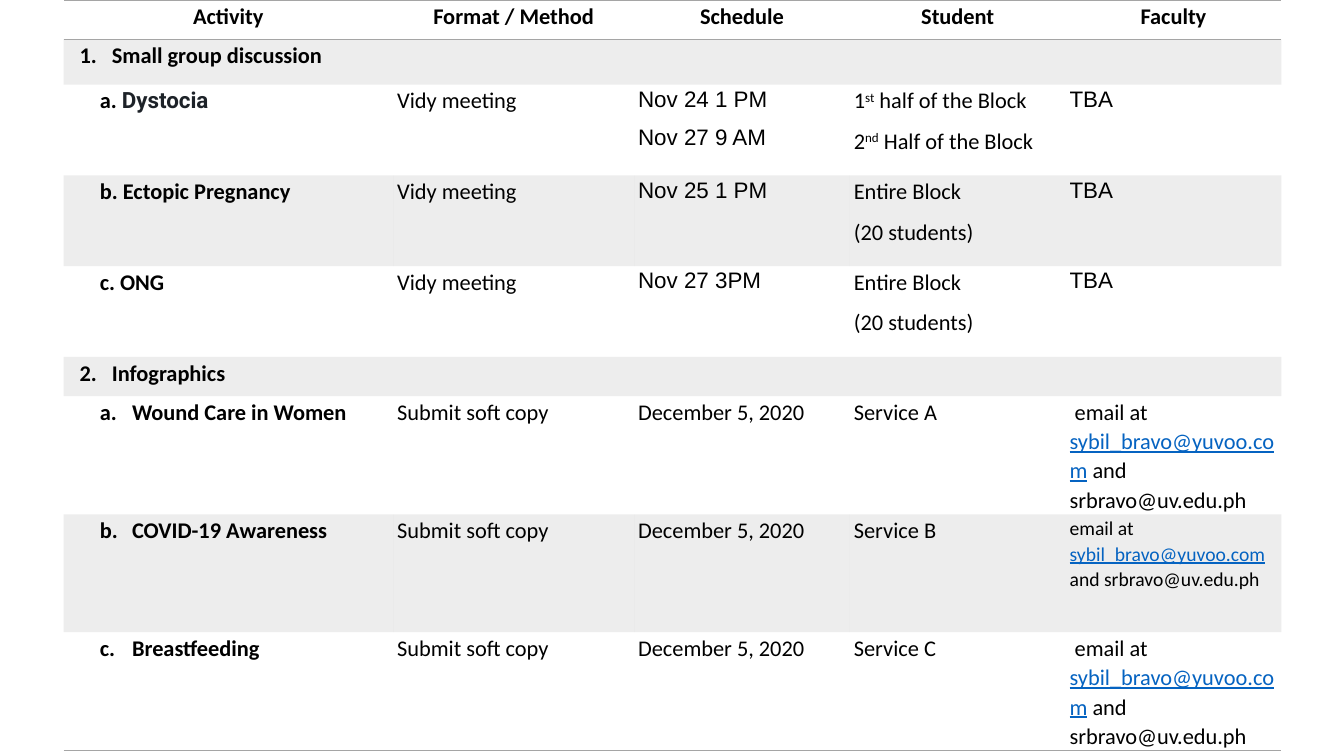
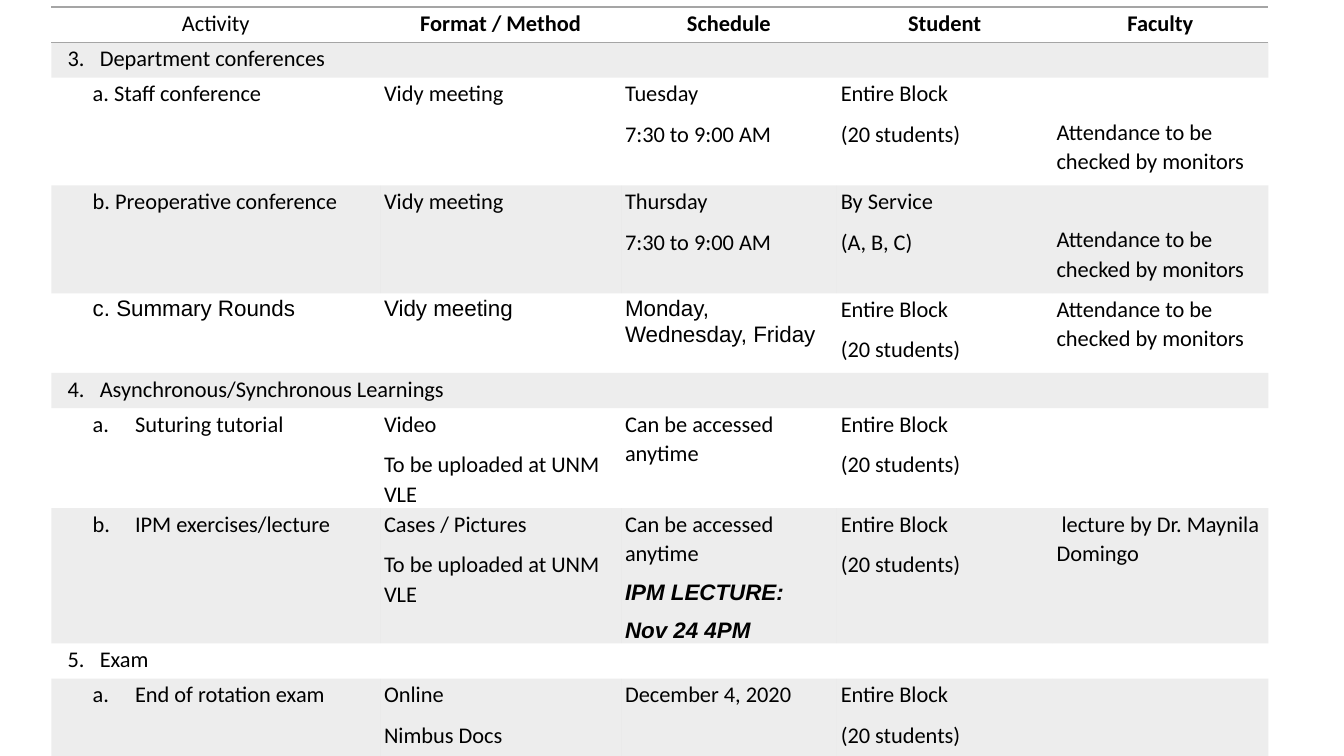
import pptx
import pptx.util
import pptx.dml.color
import pptx.enum.text
import pptx.oxml.ns
import lxml.etree

Inches = pptx.util.Inches
Pt = pptx.util.Pt
qn = pptx.oxml.ns.qn

# Shared look
GREY, BLACK, BLUE = "A5A5A5", "000000", "0563C1"
PLAIN_STYLE = "{2D5ABB26-0587-4C30-8999-92F81FD0307C}"
BASE = {"name": "Calibri", "size": Pt(16), "bold": False,
        "italic": False, "underline": False}
MARGINS = {"margin_left": Inches(0.04), "margin_right": Inches(0.04),
           "margin_top": Inches(0.01), "margin_bottom": 0}
PARA = {"line_spacing": 1.07, "space_after": Pt(8)}
COLS = [2.39, 2.14, 2.14, 2.14]
HEADS = ["Format / Method", "Schedule", "Student", "Faculty"]

# Run styles
BOLD = {"bold": True}
ARIAL = {"name": "Arial"}
STRONG = {"name": "Arial", "bold": True, "italic": True}
LINK = {"color": BLUE, "underline": True}
SUPER = {"base": "30000"}
ROBOTO = {"name": "Roboto", "bold": True, "color": "1D2228"}


def color(code):
    return pptx.dml.color.RGBColor.from_string(code)


def assign(item, values):
    for key, value in values.items():
        setattr(item, key, value)


# Kinds of cell content
def text(*runs, left=0, first=0, top=0.01, center=False):
    """Runs are strings or (string, style); a line break starts a paragraph."""
    return {"runs": runs, "left": left, "first": first,
            "top": top, "center": center}


def head(label, style=BOLD):
    return text((label, style), center=True)


def section(label, style):
    return [text((label, style), left=0.44, first=-0.32)]


def arial(label):
    return text((label, ARIAL))


def label(words, style, start, left=None):
    """Lettered entry; with left given, its words hang at that indent."""
    left = start if left is None else left
    return text((words, style), left=left, first=start - left)


def mail(first=0.05, **style):
    return text(("email at ", style), ("sybil_bravo@yuvoo.com", LINK | style),
                (" and srbravo@uv.edu.ph", style), first=first)


# Writing into cells
def paragraph(frame, item, fresh):
    para = frame.add_paragraph() if fresh else frame.paragraphs[0]
    assign(para, PARA)
    if item["center"]:
        para.alignment = pptx.enum.text.PP_ALIGN.CENTER
    props = para._p.get_or_add_pPr()
    props.set("marL", str(Inches(item["left"])))
    props.set("indent", str(Inches(item["first"])))
    return para


def write(cell, item):
    if isinstance(item, str):
        item = text(item)
    cell.margin_top = Inches(item["top"])
    para = paragraph(cell.text_frame, item, False)
    for entry in item["runs"]:
        words, style = (entry, {}) if isinstance(entry, str) else entry
        style = BASE | {"color": BLACK} | style
        tint, base = style.pop("color"), style.pop("base", None)
        for place, part in enumerate(words.split("\n")):
            if place:
                para = paragraph(cell.text_frame, item, True)
            run = para.add_run()
            run.text = part
            assign(run.font, style)
            run.font.color.rgb = color(tint)
            if base:
                run.font._element.set("baseline", base)


def shade(cell, band):
    if not band:
        cell.fill.background()
        return
    cell.fill.solid()
    cell.fill.fore_color.rgb = color(GREY)
    tone = cell._tc.tcPr.find(".//" + qn("a:srgbClr"))
    lxml.etree.SubElement(tone, qn("a:alpha"), val="20000")


def rule(cell, sides):
    for place, side in enumerate(sides):
        line = lxml.etree.Element(qn("a:ln" + side), w=str(Pt(1)))
        fill = lxml.etree.SubElement(line, qn("a:solidFill"))
        lxml.etree.SubElement(fill, qn("a:srgbClr"), val=GREY)
        cell._tc.get_or_add_tcPr().insert(place, line)


# One schedule table per slide
def schedule(deck, left, top, wide, heights, rows):
    slide = deck.slides.add_slide(deck.slide_layouts[6])
    widths = [wide] + COLS
    frame = slide.shapes.add_table(
        len(rows), len(widths), Inches(left), Inches(top),
        Inches(sum(widths)), Inches(sum(heights)))
    table = frame.table
    assign(table, {"first_row": False, "horz_banding": False})
    table._tbl.tblPr.find(qn("a:tableStyleId")).text = PLAIN_STYLE
    for col, width in zip(table.columns, widths):
        col.width = Inches(width)
    for row, height in zip(table.rows, heights):
        row.height = Inches(height)

    for r, items in enumerate(rows):
        for c in range(len(widths)):
            cell = table.cell(r, c)
            assign(cell, MARGINS)
            shade(cell, r % 2)
            if r in (0, len(rows) - 1):
                rule(cell, "B" if r else "TB")
        if len(items) == 1:
            table.cell(r, 0).merge(table.cell(r, len(widths) - 1))
        for c, item in enumerate(items):
            if item:
                write(table.cell(r, c), item)


def groups(deck):
    meet, copy = "Vidy meeting", "Submit soft copy"
    block, day = "Entire Block\n(20 students)", "December 5, 2020"
    start, hang = 0.32, 0.64
    halves = text("1", ("st", SUPER), " half of the Block\n2",
                  ("nd", SUPER), " Half of the Block")
    topic = text(("a. ", BOLD), ("Dystocia", ROBOTO), left=start)
    rows = [
        [head("Activity")] + [head(h) for h in HEADS],
        section("1.\tSmall group discussion", BOLD),
        [topic, meet, arial("Nov 24 1 PM\nNov 27 9 AM"), halves,
         arial("TBA")],
        [label("b. Ectopic Pregnancy", BOLD, start), meet,
         arial("Nov 25 1 PM"), block, arial("TBA")],
        [label("c. ONG", BOLD, start), meet,
         arial("Nov 27 3PM"), block, arial("TBA")],
        section("2.\tInfographics", BOLD),
        [label("a.\tWound Care in Women", BOLD, start, hang), copy, day,
         "Service A", mail()],
        [label("b.\tCOVID-19 Awareness", BOLD, start, hang), copy, day,
         "Service B", mail(first=0, size=Pt(14))],
        [label("c.\tBreastfeeding", BOLD, start, hang), copy, day,
         "Service C", mail()],
    ]
    heights = [0.39, 0.45] + [0.9] * 3 + [0.39] + [1.17] * 3
    schedule(deck, 0.63, 0, 3.27, heights, rows)


def lessons(deck):
    meet, block = "Vidy meeting", "Entire Block\n(20 students)"
    upload = "\nTo be uploaded at UNM VLE"
    hours, access = "\n7:30 to 9:00 AM", "Can be accessed anytime"
    check = "Attendance to be checked by monitors"
    lower = text(check, top=0.39)
    start, hang = 0.37, 0.79
    rows = [
        [head("Activity", {})] + [head(h) for h in HEADS],
        section("3.\tDepartment conferences", {}),
        [label("a. Staff conference", {}, start), meet,
         "Tuesday" + hours, block, lower],
        [label("b. Preoperative conference", {}, start), meet,
         "Thursday" + hours, "By Service\n(A, B, C)", lower],
        [label("c. Summary Rounds", ARIAL, start), arial(meet),
         arial("Monday, Wednesday, Friday"), block, check],
        section("4.\tAsynchronous/Synchronous Learnings", {}),
        [label("a.\tSuturing tutorial", {}, start, hang),
         "Video" + upload, access, block, None],
        [label("b.\tIPM exercises/lecture", {}, start, hang),
         "Cases / Pictures" + upload,
         text(access, ("\nIPM LECTURE:\nNov 24 4PM", STRONG)), block,
         text("lecture by Dr. Maynila Domingo", first=0.05)],
        section("5.\tExam", {}),
        [label("a.\tEnd of rotation exam", {}, start, hang),
         "Online\nNimbus Docs", "December 4, 2020", block, None],
    ]
    heights = [0.35, 0.35, 1.07, 1.07, 0.79, 0.35, 0.99, 1.34, 0.35, 0.82]
    schedule(deck, 0.51, 0.07, 3.26, heights, rows)


def main():
    deck = pptx.Presentation()
    assign(deck, {"slide_width": Inches(13.33), "slide_height": Inches(7.5)})
    groups(deck)
    lessons(deck)
    deck.save("out.pptx")


if __name__ == "__main__":
    main()
